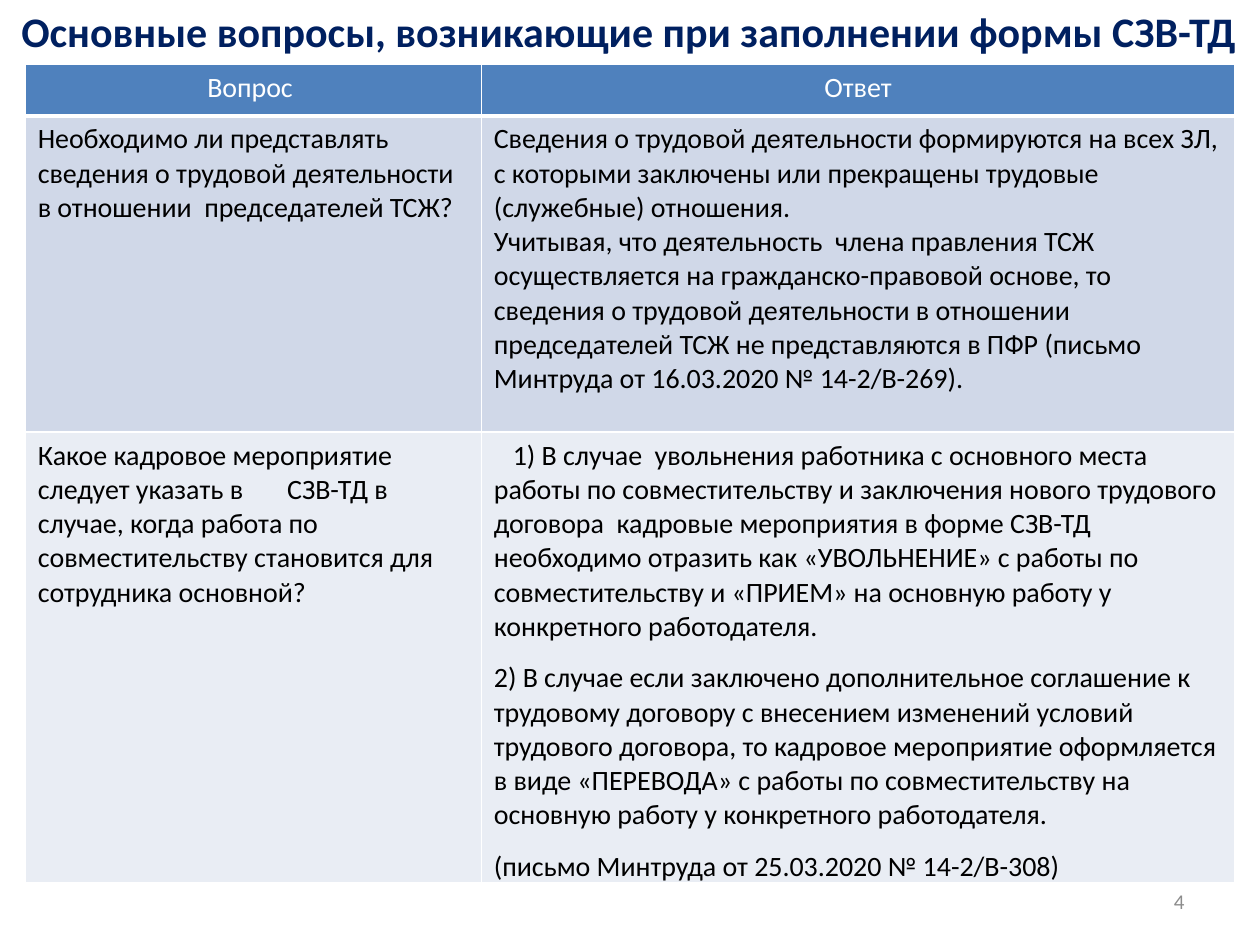
from lxml.etree import SubElement
from pptx import Presentation
from pptx.dml.color import RGBColor
from pptx.enum.text import MSO_ANCHOR, PP_ALIGN
from pptx.oxml.ns import qn
from pptx.util import Inches, Pt

HEADING = "Основные вопросы, возникающие при заполнении формы СЗВ-ТД"
PAGE_NUMBER = "4"
HEADERS = ["Вопрос ", "Ответ"]
QUESTIONS = [
    (
        ["Необходимо ли представлять  сведения о трудовой деятельности в отношении  председателей ТСЖ?"],
        [
            "Сведения о трудовой деятельности формируются на всех ЗЛ, с которыми заключены или прекращены "
            "трудовые (служебные) отношения.",
            "Учитывая, что деятельность  члена правления ТСЖ осуществляется на гражданско-правовой основе, "
            "то сведения о трудовой деятельности в отношении председателей ТСЖ не представляются в ПФР "
            "(письмо Минтруда от 16.03.2020 № 14-2/В-269).",
        ],
        0,
    ),
    (
        ["Какое кадровое мероприятие следует указать в       СЗВ-ТД в случае, когда работа по "
         "совместительству становится для сотрудника основной?"],
        [
            "   1) В случае  увольнения работника с основного места работы по совместительству и заключения "
            "нового трудового договора  кадровые мероприятия в форме СЗВ-ТД необходимо отразить как "
            "«УВОЛЬНЕНИЕ» с работы по совместительству и «ПРИЕМ» на основную работу у конкретного работодателя.",
            "2) В случае если заключено дополнительное соглашение к трудовому договору с внесением изменений "
            "условий трудового договора, то кадровое мероприятие оформляется в виде «ПЕРЕВОДА» с работы по "
            "совместительству на основную работу у конкретного работодателя.",
            "(письмо Минтруда от 25.03.2020 № 14-2/В-308)",
        ],
        10,
    ),
]
COLUMN_WIDTHS = [3.62, 5.98]
ROW_HEIGHTS = [0.41, 2.51, 1.44]
COLORS = {
    "heading": "002060",
    "header": "4F81BD",
    "odd": "D0D8E8",
    "even": "E9EDF4",
    "white": "FFFFFF",
    "text": "000000",
    "number": "8C8C8C",
}


def write(frame, paragraphs, size=16, color="text", bold=False, align=PP_ALIGN.LEFT, space_after=0):
    frame.word_wrap = True
    for index, text in enumerate(paragraphs):
        paragraph = frame.paragraphs[0] if index == 0 else frame.add_paragraph()
        paragraph.alignment = align
        paragraph.space_after = Pt(space_after)
        run = paragraph.add_run()
        run.text = text
        run.font.name = "Calibri"
        run.font.size = Pt(size)
        run.font.bold = bold
        run.font.color.rgb = RGBColor.from_string(COLORS[color])


def add_grid(slide, left, top, widths, heights):
    frame = slide.shapes.add_table(len(heights), len(widths), Inches(left), Inches(top),
                                   Inches(sum(widths)), Inches(sum(heights)))
    for column, width in zip(frame.table.columns, widths):
        column.width = Inches(width)
    for row, height in zip(frame.table.rows, heights):
        row.height = Inches(height)
    return frame


def style_cell(cell, fill=None, bottom=1):
    properties = cell._tc.get_or_add_tcPr()
    for side, width in {"lnL": 1, "lnR": 1, "lnT": 1, "lnB": bottom}.items():
        border = SubElement(properties, qn(f"a:{side}"), w=str(Pt(width)))
        if fill:
            solid = SubElement(border, qn("a:solidFill"))
            SubElement(solid, qn("a:srgbClr"), val=COLORS["white"])
        else:
            SubElement(border, qn("a:noFill"))
    if fill:
        cell.fill.solid()
        cell.fill.fore_color.rgb = RGBColor.from_string(COLORS[fill])
    else:
        cell.fill.background()


def main():
    deck = Presentation()
    deck.slide_width, deck.slide_height = Inches(10), Inches(7.5)
    slide = deck.slides.add_slide(deck.slide_layouts[6])

    number = slide.shapes.add_textbox(Inches(7.17), Inches(6.95), Inches(2.33), Inches(0.4))
    number.text_frame.vertical_anchor = MSO_ANCHOR.MIDDLE
    write(number.text_frame, [PAGE_NUMBER], size=12, color="number", align=PP_ALIGN.RIGHT)

    answers_frame = add_grid(slide, 0.2, 0.51, COLUMN_WIDTHS, ROW_HEIGHTS)
    answers_frame.height = Inches(6.5)
    answers = answers_frame.table
    for column, header in enumerate(HEADERS):
        cell = answers.cell(0, column)
        style_cell(cell, "header", bottom=3)
        write(cell.text_frame, [header], color="white", align=PP_ALIGN.CENTER)
    for row, (question, answer, answer_gap) in enumerate(QUESTIONS, start=1):
        for column, (paragraphs, gap) in enumerate([(question, 0), (answer, answer_gap)]):
            cell = answers.cell(row, column)
            style_cell(cell, "odd" if row % 2 else "even")
            write(cell.text_frame, paragraphs, space_after=gap)

    heading = add_grid(slide, 0.05, 0.01, [9.88], [0.71]).table.cell(0, 0)
    style_cell(heading)
    write(heading.text_frame, [HEADING], size=24, color="heading", bold=True, align=PP_ALIGN.CENTER)

    deck.save("out.pptx")


if __name__ == "__main__":
    main()
